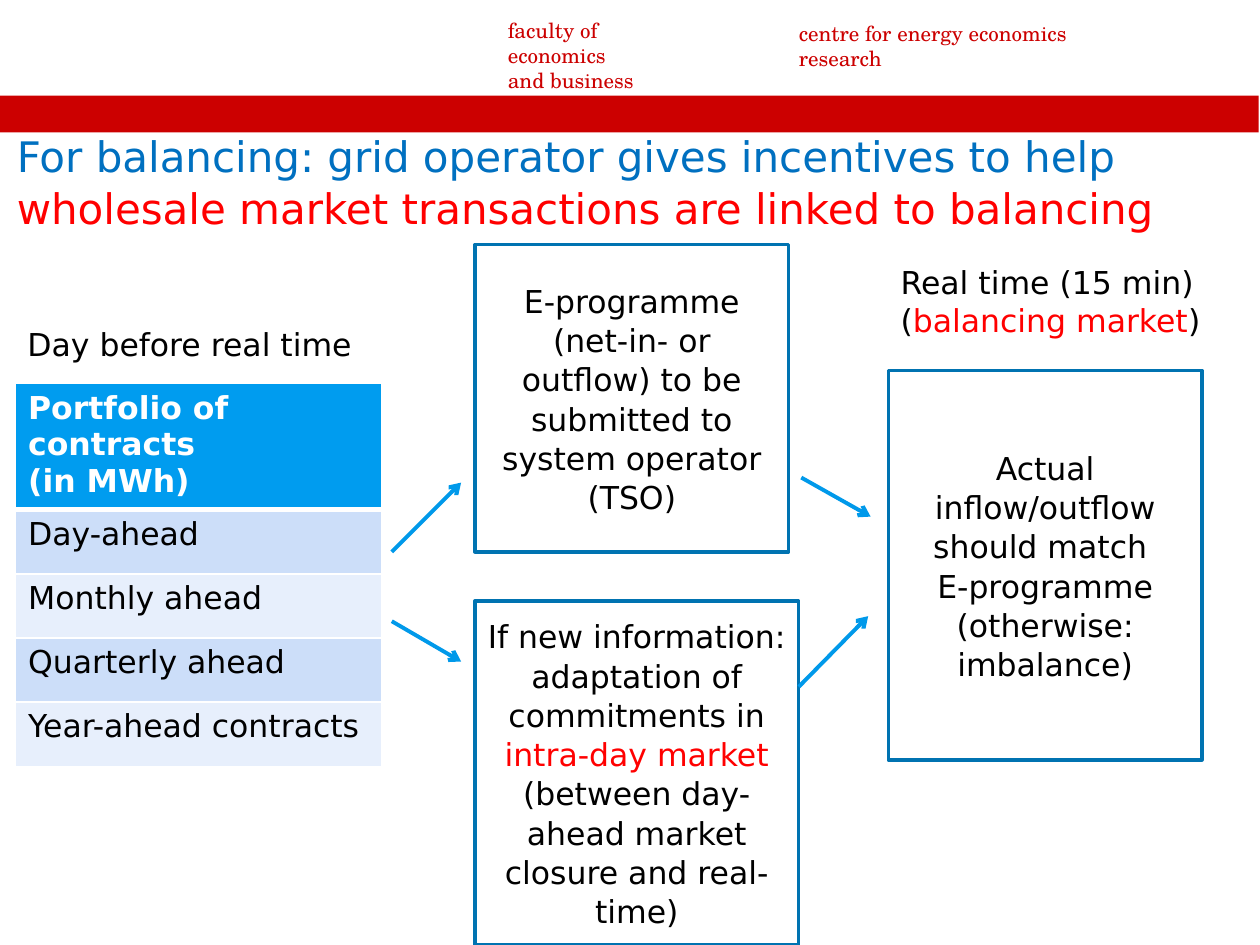
"""Build the slide that links wholesale market transactions to balancing."""
from dataclasses import dataclass

from lxml import etree
from pptx import Presentation
from pptx.dml.color import RGBColor
from pptx.enum.shapes import MSO_CONNECTOR, MSO_SHAPE
from pptx.enum.text import MSO_ANCHOR, PP_ALIGN
from pptx.oxml.ns import qn
from pptx.shapes.autoshape import Shape
from pptx.slide import Slide
from pptx.table import _Cell
from pptx.util import Pt

RECTANGLE = MSO_SHAPE.RECTANGLE
STRAIGHT = MSO_CONNECTOR.STRAIGHT
CENTER, LEFT = PP_ALIGN.CENTER, PP_ALIGN.LEFT
MIDDLE, TOP = MSO_ANCHOR.MIDDLE, MSO_ANCHOR.TOP

BLACK = RGBColor(0x00, 0x00, 0x00)
WHITE = RGBColor(0xFF, 0xFF, 0xFF)
RED = RGBColor(0xFF, 0x00, 0x00)
BANNER_RED = RGBColor(0xCC, 0x00, 0x00)
TITLE_BLUE = RGBColor(0x00, 0x70, 0xC0)
BOX_BLUE = RGBColor(0x00, 0x73, 0xB1)
ARROW_BLUE = RGBColor(0x00, 0x99, 0xEA)
HEADER_BLUE = RGBColor(0x00, 0x9C, 0xEF)
BANDS = (RGBColor(0xCC, 0xDE, 0xF9), RGBColor(0xE7, 0xEF, 0xFC))

SANS = "DejaVu Sans"
SERIF = "TeX Gyre Schola"


@dataclass(frozen=True)
class Span:
    text: str
    color: RGBColor = BLACK


@dataclass(frozen=True)
class Block:
    left: float
    top: float
    width: float
    height: float
    paragraphs: tuple[tuple[Span, ...], ...]
    size: float = 18
    font: str = SANS
    margins: tuple[float, float] = (7.2, 3.6)
    align: PP_ALIGN = LEFT
    anchor: MSO_ANCHOR = TOP
    spacing: float = 1.0


@dataclass(frozen=True)
class Arrow:
    start: tuple[float, float]
    end: tuple[float, float]


def process_box(left: float, top: float, width: float, height: float,
                *paragraphs: tuple[Span, ...]) -> Block:
    """Describe a box with centred text."""
    return Block(left, top, width, height, paragraphs,
                 align=CENTER, anchor=MIDDLE, spacing=1.04)


TEXTS = (
    Block(290.2, 10.1, 86, 44,
          ((Span("faculty of economics", BANNER_RED),),
           (Span("and business", BANNER_RED),)),
          size=12, font=SERIF, margins=(0, 0)),
    Block(456.5, 11.5, 166, 30,
          ((Span("centre for energy economics research", BANNER_RED),),),
          size=12, font=SERIF, margins=(0, 0)),
    Block(9.6, 77.8, 697.7, 51.1,
          ((Span("For balancing: grid operator gives incentives to help", TITLE_BLUE),),
           (Span("wholesale market transactions are linked to balancing", RED),)),
          size=24, margins=(0, 3.6), anchor=MIDDLE, spacing=1.04),
    Block(8.6, 182.2, 203, 29, ((Span("Day before real time"),),)),
    Block(507.6, 146.9, 189.4, 51,
          ((Span("Real time (15 min)"),),
           (Span("("), Span("balancing market", RED), Span(")")))),
)

BOXES = (
    process_box(271.4, 139.7, 179.3, 175.7,
                (Span("E-programme (net-in- or outflow) to be submitted to "
                      "system operator (TSO)"),)),
    process_box(271.4, 343.4, 185, 196.6,
                (Span("If new information:"),),
                (Span("adaptation of commitments in "),
                 Span("intra-day market ", RED),
                 Span("(between day-ahead market closure and real-time)"))),
    process_box(507.6, 211.7, 179.3, 222.5,
                (Span("Actual inflow/outflow should match "),),
                (Span("E-programme"),),
                (Span("(otherwise: imbalance)"),)),
)

ARROWS = (
    Arrow((223.9, 315.4), (263.5, 275.8)),
    Arrow((223.9, 355), (263.5, 378)),
    Arrow((456.5, 392.4), (496.1, 352.1)),
    Arrow((457.9, 272.9), (497.5, 295.2)),
)

PORTFOLIO = ("Portfolio of contracts\n(in MWh)", "Day-ahead", "Monthly ahead",
             "Quarterly ahead", "Year-ahead contracts")


def write_text(shape: Shape, block: Block) -> None:
    """Fill a shape with the coloured paragraphs of a block."""
    frame = shape.text_frame
    frame.word_wrap = True
    frame.vertical_anchor = block.anchor
    frame.margin_left = frame.margin_right = Pt(block.margins[0])
    frame.margin_top = frame.margin_bottom = Pt(block.margins[1])
    for index, spans in enumerate(block.paragraphs):
        paragraph = frame.add_paragraph() if index else frame.paragraphs[0]
        paragraph.alignment = block.align
        paragraph.line_spacing = block.spacing
        for span in spans:
            run = paragraph.add_run()
            run.text = span.text
            run.font.name = block.font
            run.font.size = Pt(block.size)
            run.font.color.rgb = span.color


def add_banner(slide: Slide) -> None:
    """Draw the red bar under the header."""
    banner = slide.shapes.add_shape(RECTANGLE, Pt(0), Pt(54.7), Pt(719.3), Pt(20.9))
    banner.shadow.inherit = False
    banner.fill.solid()
    banner.fill.fore_color.rgb = BANNER_RED
    banner.line.fill.background()


def add_text(slide: Slide, block: Block) -> None:
    """Draw a plain text box."""
    shape = slide.shapes.add_textbox(
        Pt(block.left), Pt(block.top), Pt(block.width), Pt(block.height))
    write_text(shape, block)


def add_box(slide: Slide, block: Block) -> None:
    """Draw an outlined process box."""
    shape = slide.shapes.add_shape(
        RECTANGLE, Pt(block.left), Pt(block.top), Pt(block.width), Pt(block.height))
    shape.shadow.inherit = False
    shape.fill.background()
    shape.line.color.rgb = BOX_BLUE
    shape.line.width = Pt(2)
    write_text(shape, block)


def add_arrow(slide: Slide, arrow: Arrow) -> None:
    """Draw a straight line with an open arrowhead at its end."""
    connector = slide.shapes.add_connector(
        STRAIGHT, *(Pt(value) for value in arrow.start + arrow.end))
    connector.line.color.rgb = ARROW_BLUE
    connector.line.width = Pt(2.25)
    properties = connector._element.spPr
    etree.SubElement(properties.find(qn("a:ln")), qn("a:tailEnd"), type="arrow")
    etree.SubElement(properties, qn("a:effectLst"))


def add_borders(cell: _Cell, top: float, bottom: float) -> None:
    """Give a cell white borders."""
    properties = cell._tc.get_or_add_tcPr()
    for side, width in (("L", 1), ("R", 1), ("T", top), ("B", bottom)):
        line = etree.SubElement(properties, qn(f"a:ln{side}"), w=str(Pt(width)))
        fill = etree.SubElement(line, qn("a:solidFill"))
        etree.SubElement(fill, qn("a:srgbClr"), val=str(WHITE))


def add_portfolio(slide: Slide) -> None:
    """Draw the table of contracts."""
    table = slide.shapes.add_table(
        len(PORTFOLIO), 1, Pt(8.9), Pt(219.2), Pt(209.2), Pt(215.8)).table
    for index, text in enumerate(PORTFOLIO):
        header = index == 0
        table.rows[index].height = Pt(69 if header else 36.7)
        cell = table.cell(index, 0)
        add_borders(cell, 3 if index == 1 else 1, 3 if header else 1)
        cell.fill.solid()
        cell.fill.fore_color.rgb = HEADER_BLUE if header else BANDS[(index - 1) % 2]
        cell.text_frame.text = text
        for paragraph in cell.text_frame.paragraphs:
            for run in paragraph.runs:
                run.font.name = SANS
                run.font.size = Pt(18)
                run.font.bold = header
                run.font.color.rgb = WHITE if header else BLACK


def main() -> None:
    """Build and save the presentation."""
    presentation = Presentation()
    presentation.slide_width, presentation.slide_height = Pt(720), Pt(540)
    slide = presentation.slides.add_slide(presentation.slide_layouts[6])
    add_banner(slide)
    for block in TEXTS:
        add_text(slide, block)
    add_portfolio(slide)
    for block in BOXES:
        add_box(slide, block)
    for arrow in ARROWS:
        add_arrow(slide, arrow)
    presentation.save("out.pptx")


if __name__ == "__main__":
    main()
